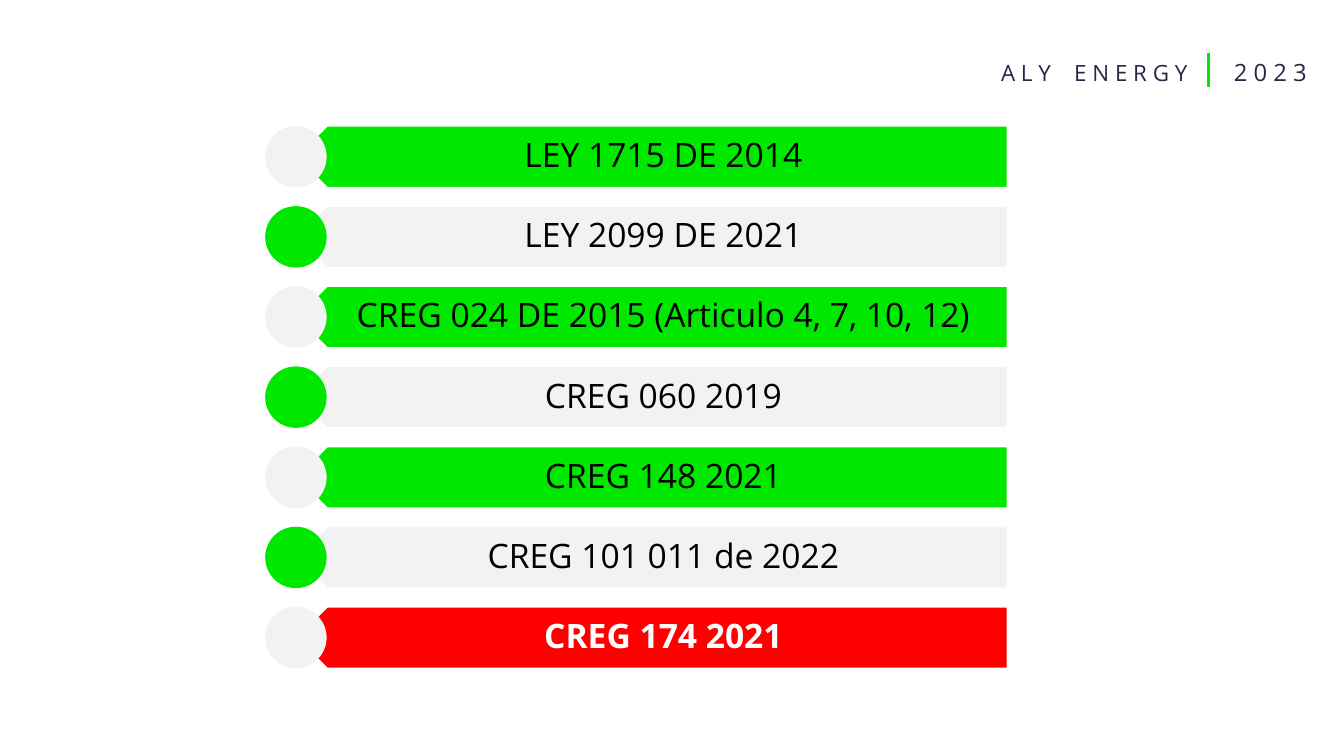
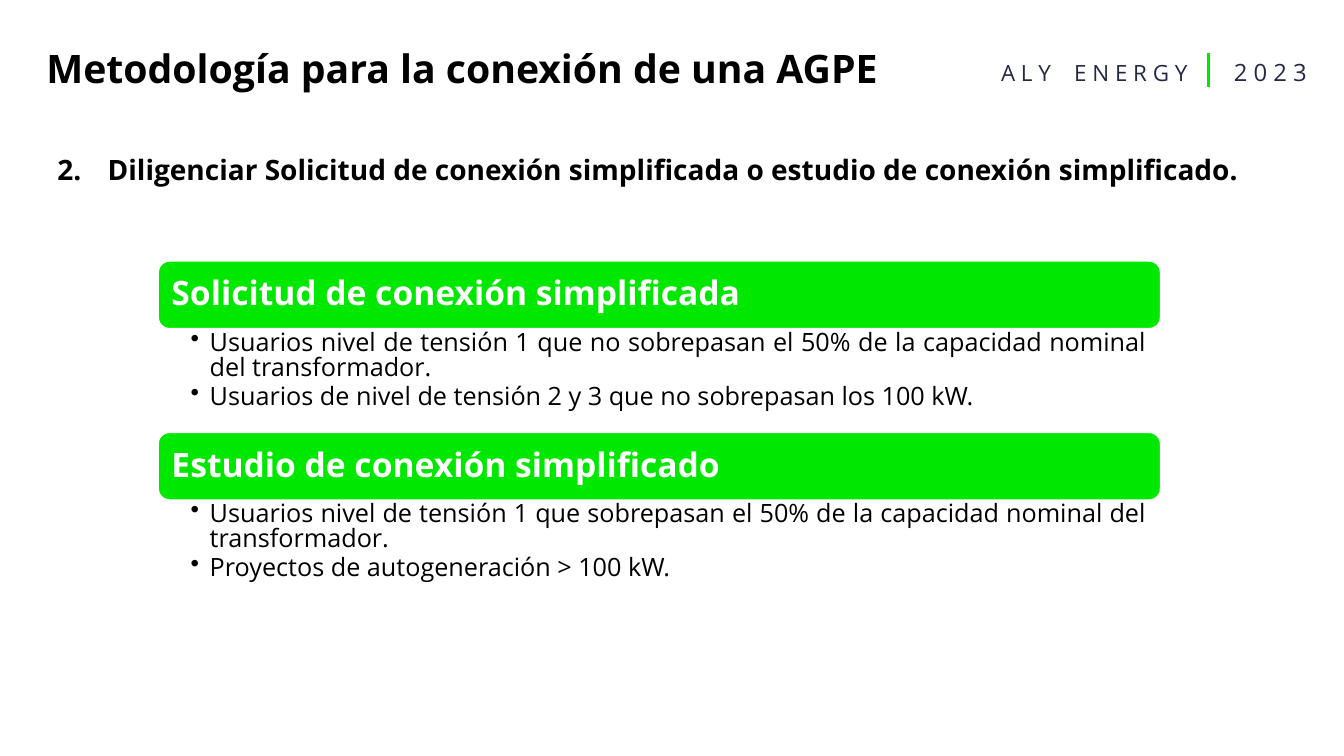
from dataclasses import dataclass

from lxml.etree import SubElement
from pptx import Presentation
from pptx.dml.color import RGBColor
from pptx.enum.shapes import MSO_CONNECTOR, MSO_SHAPE
from pptx.enum.text import MSO_ANCHOR, MSO_AUTO_SIZE, PP_ALIGN
from pptx.oxml.ns import qn
from pptx.util import Inches, Pt


@dataclass(frozen=True)
class Theme:
    font: str = "Open Sans"
    green: str = "00E700"
    gray: str = "F2F2F2"
    red: str = "FF0000"
    white: str = "FFFFFF"
    black: str = "000000"
    navy: str = "242846"
    title_size: int = 28
    bar_size: int = 24
    step_size: int = 20
    body_size: int = 18
    year_size: int = 17
    brand_size: int = 16


TITLE_ONLY, BLANK = 5, 6
DEFAULT_INSETS = (0.1, 0.05, 0.1, 0.05)

REGULATIONS = [
    "LEY 1715 DE 2014",
    "LEY 2099 DE 2021",
    "CREG 024 DE 2015 (Articulo 4, 7, 10, 12)",
    "CREG 060 2019",
    "CREG 148 2021",
    "CREG 101 011 de 2022",
    "CREG 174 2021",
]

PROCEDURES = [
    ("Solicitud de conexión simplificada", [
        "Usuarios nivel de tensión 1 que no sobrepasan el 50% de la capacidad "
        "nominal del transformador.",
        "Usuarios de nivel de tensión 2 y 3 que no sobrepasan los 100 kW.",
    ]),
    ("Estudio de conexión simplificado", [
        "Usuarios nivel de tensión 1 que sobrepasan el 50% de la capacidad "
        "nominal del transformador.",
        "Proyectos de autogeneración > 100 kW.",
    ]),
]


def rgb(code):
    return RGBColor.from_string(code)


def add_marker(paragraph, indent, tag, **attributes):
    """Hang the paragraph by indent inches behind a bullet or number."""
    properties = paragraph._p.get_or_add_pPr()
    properties.set("marL", str(Inches(indent)))
    properties.set("indent", str(-Inches(indent)))
    marker = SubElement(properties, qn(f"a:{tag}"))
    for name, value in attributes.items():
        marker.set(name, value)


def write(frame, paragraphs, *, size, color, bold=False, align=PP_ALIGN.LEFT,
          anchor=MSO_ANCHOR.TOP, insets=DEFAULT_INSETS, spacing=1.0, after=0,
          marker=None):
    """Fill a text frame; a paragraph is a string or (text, tracking) parts."""
    frame.word_wrap = True
    frame.auto_size = MSO_AUTO_SIZE.NONE
    frame.vertical_anchor = anchor
    (frame.margin_left, frame.margin_top,
     frame.margin_right, frame.margin_bottom) = map(Inches, insets)
    for index, content in enumerate(paragraphs):
        paragraph = frame.add_paragraph() if index else frame.paragraphs[0]
        if marker:
            add_marker(paragraph, **marker)
        paragraph.alignment = align
        paragraph.line_spacing = spacing
        paragraph.space_before = Pt(0)
        paragraph.space_after = Pt(after)
        parts = [(content, 0)] if isinstance(content, str) else content
        for text, tracking in parts:
            run = paragraph.add_run()
            run.text = text
            run.font.name = Theme.font
            run.font.size = Pt(size)
            run.font.bold = bold
            run.font.color.rgb = rgb(color)
            if tracking:
                run._r.get_or_add_rPr().set("spc", str(int(tracking * 100)))


class Deck:
    def __init__(self, theme):
        self.theme = theme
        self.presentation = Presentation()
        self.presentation.slide_width = Inches(13.33)
        self.presentation.slide_height = Inches(7.5)
        self.slide = None

    def new_slide(self, title=None):
        layout = self.presentation.slide_layouts[TITLE_ONLY if title else BLANK]
        self.slide = self.presentation.slides.add_slide(layout)
        self.brand_header()
        if title:
            heading = self.slide.shapes.title
            heading.left, heading.top = Inches(0.36), Inches(0.39)
            heading.width, heading.height = Inches(8.65), Inches(0.57)
            write(heading.text_frame, [title], size=self.theme.title_size,
                  color=self.theme.black, bold=True, anchor=MSO_ANCHOR.MIDDLE)

    def brand_header(self):
        theme = self.theme
        self.text(9.83, 0.52, 2.12, 0.45,
                  [[("A L Y", 0), (" ", 12.5), ("E N E R G Y", 0)]],
                  size=theme.brand_size, color=theme.navy, spacing=1.07)
        self.line(11.99, 0.53, 11.99, 0.86, theme.green, 2.25)
        self.text(12.04, 0.5, 1.12, 0.82, ["2 0 2 3"], size=theme.year_size,
                  color=theme.navy, align=PP_ALIGN.CENTER, spacing=1.07)

    def text(self, left, top, width, height, paragraphs, **style):
        box = self.slide.shapes.add_textbox(
            *map(Inches, (left, top, width, height)))
        write(box.text_frame, paragraphs, **style)

    def line(self, x1, y1, x2, y2, color, weight):
        rule = self.slide.shapes.add_connector(
            MSO_CONNECTOR.STRAIGHT, *map(Inches, (x1, y1, x2, y2)))
        rule.line.color.rgb = rgb(color)
        rule.line.width = Pt(weight)
        SubElement(rule._element.spPr, qn("a:effectLst"))

    def shape(self, kind, left, top, width, height, fill, outlined=True):
        figure = self.slide.shapes.add_shape(
            kind, *map(Inches, (left, top, width, height)))
        figure.shadow.inherit = False
        figure.fill.solid()
        figure.fill.fore_color.rgb = rgb(fill)
        if outlined:
            figure.line.color.rgb = rgb(self.theme.white)
            figure.line.width = Pt(1)
        else:
            figure.line.fill.background()
        return figure

    def regulation_bar(self, top, label, bar_color, dot_color, highlighted):
        theme, height = self.theme, 0.61
        bar = self.shape(MSO_SHAPE.PENTAGON, 2.94, top, 7.05, height, bar_color)
        bar.rotation = 180
        self.text(3.09, top, 6.9, height, [label], size=theme.bar_size,
                  color=theme.white if highlighted else theme.black,
                  bold=highlighted, align=PP_ALIGN.CENTER,
                  anchor=MSO_ANCHOR.MIDDLE, insets=(0.27, 0.1, 0.19, 0.1),
                  spacing=0.9)
        self.shape(MSO_SHAPE.OVAL, 2.63, top, height, height, dot_color,
                   outlined=False)

    def procedure(self, top, heading, conditions):
        theme, left, width, height = self.theme, 1.57, 9.94, 0.67
        banner = self.shape(MSO_SHAPE.ROUNDED_RECTANGLE, left, top, width,
                            height, theme.green)
        write(banner.text_frame, [heading], size=theme.bar_size,
              color=theme.white, bold=True, anchor=MSO_ANCHOR.MIDDLE,
              insets=(0.1, 0.1, 0.1, 0.1), spacing=0.9)
        self.text(left, top + height, width, 1.03, conditions,
                  size=theme.body_size, color=theme.black,
                  align=PP_ALIGN.JUSTIFY, insets=(0.32, 0.03, 0.14, 0.03),
                  spacing=0.82, after=3,
                  marker={"indent": 0.19, "tag": "buChar", "char": "•"})


def regulations_slide(deck):
    theme = deck.theme
    deck.new_slide()
    first_top, last_top = 1.25, 6.02
    last = len(REGULATIONS) - 1
    pitch = (last_top - first_top) / last
    for index, label in enumerate(REGULATIONS):
        colors = [theme.green, theme.gray]
        if index % 2:
            colors.reverse()
        bar_color, dot_color = colors
        highlighted = index == last
        deck.regulation_bar(first_top + index * pitch, label,
                            theme.red if highlighted else bar_color,
                            dot_color, highlighted)


def connection_slide(deck):
    deck.new_slide("Metodología para la conexión de una AGPE")
    deck.text(0.47, 1.5, 12.13, 5.43,
              ["Diligenciar Solicitud de conexión simplificada o estudio de "
               "conexión simplificado."],
              size=deck.theme.step_size, color=deck.theme.black, bold=True,
              align=PP_ALIGN.JUSTIFY, spacing=0.9,
              marker={"indent": 0.5, "tag": "buAutoNum",
                      "type": "arabicPeriod", "startAt": "2"})
    for index, (heading, conditions) in enumerate(PROCEDURES):
        deck.procedure(2.59 + index * 1.7, heading, conditions)


def main():
    deck = Deck(Theme())
    regulations_slide(deck)
    connection_slide(deck)
    deck.presentation.save("out.pptx")


if __name__ == "__main__":
    main()
